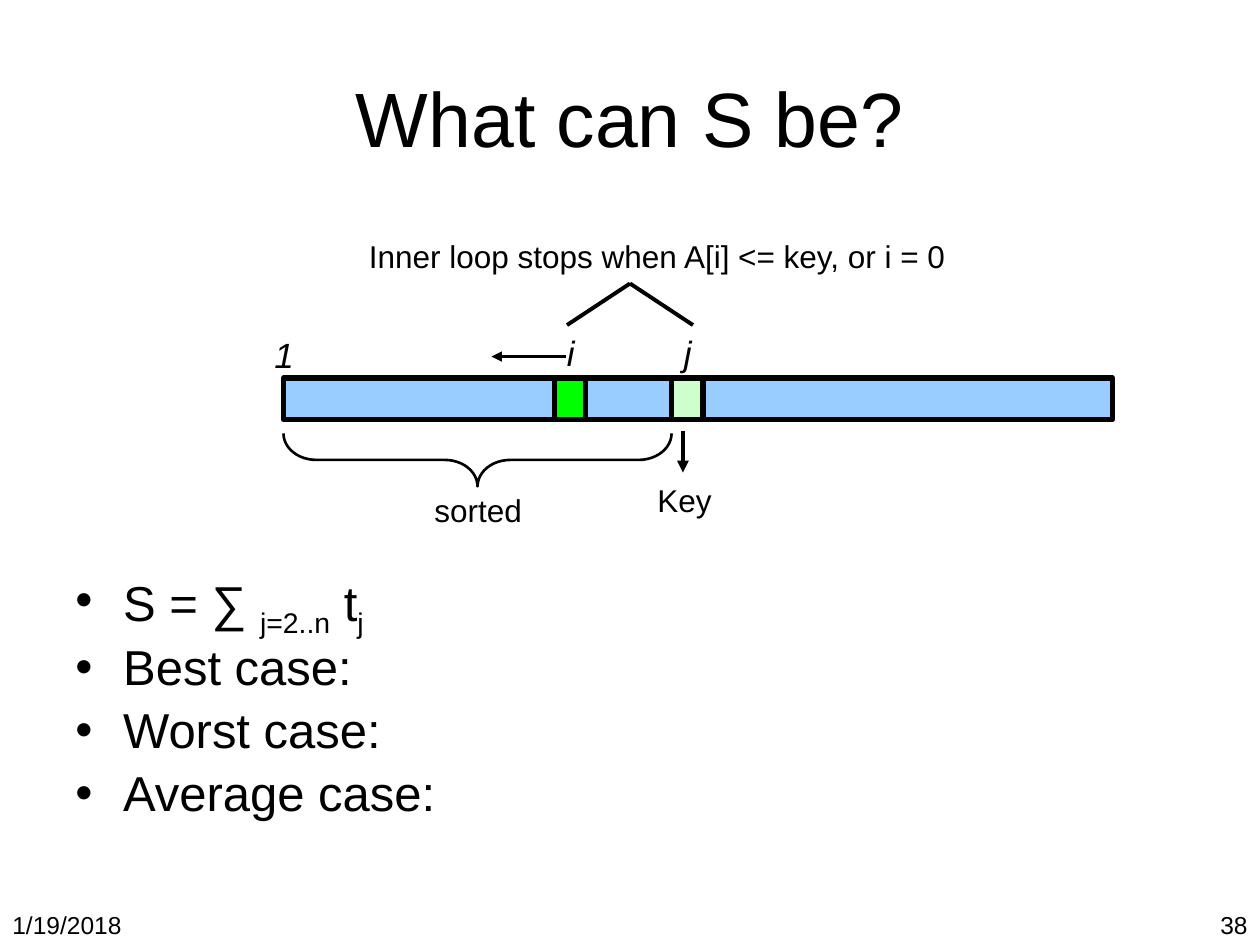
from lxml.etree import SubElement
from pptx import Presentation
from pptx.dml.color import RGBColor
from pptx.enum.shapes import MSO_CONNECTOR, MSO_SHAPE
from pptx.enum.text import MSO_ANCHOR, PP_ALIGN
from pptx.oxml.ns import qn
from pptx.util import Inches, Pt

BLACK = RGBColor(0x00, 0x00, 0x00)
BLUE = RGBColor(0x99, 0xCC, 0xFF)
PALE_GREEN = RGBColor(0xCC, 0xFF, 0xCC)
GREEN = RGBColor(0x00, 0xFF, 0x00)
FONT = "Arial"
ARRAY_TOP, ARRAY_HEIGHT = 3, 0.33

prs = Presentation()
prs.slide_width, prs.slide_height = Inches(10), Inches(7.5)
slide = prs.slides.add_slide(prs.slide_layouts[5])
shapes = slide.shapes


def add_run(paragraph, text, size, italic=False):
    run = paragraph.add_run()
    run.text = text
    run.font.name = FONT
    run.font.size = Pt(size)
    run.font.italic = italic
    run.font.color.rgb = BLACK
    return run


title = shapes.title
title.left, title.top = Inches(0.5), Inches(0.3)
title.width, title.height = Inches(9), Inches(1.25)
title.text_frame.vertical_anchor = MSO_ANCHOR.MIDDLE
heading = title.text_frame.paragraphs[0]
heading.alignment = PP_ALIGN.CENTER
add_run(heading, "What can S be?", 44)

# Cases to analyse; the second item of each pair is the baseline shift
cases = [
    [("S = ∑ ", 0), ("j=2..n", -25), (" t", 0), ("j", -25)],
    [("Best case:", 0)],
    [("Worst case:", 0)],
    [("Average case:", 0)],
]
body = shapes.add_textbox(Inches(0.5), Inches(4.5), Inches(9), Inches(2.2)).text_frame
body.word_wrap = True
for number, parts in enumerate(cases):
    case = body.add_paragraph() if number else body.paragraphs[0]
    case.line_spacing = 0.9
    case.space_before = Pt(5.6)
    properties = case._p.get_or_add_pPr()
    properties.set("marL", str(Inches(0.38)))
    properties.set("indent", str(-Inches(0.38)))
    SubElement(properties, qn("a:buFont"), typeface=FONT)
    SubElement(properties, qn("a:buChar"), char="•")
    for text, baseline in parts:
        run = add_run(case, text, 28)
        if baseline:
            run.font._element.set("baseline", str(baseline * 1000))

# Array with the cells i and j
for left, width, color in [(2.25, 6.58, BLUE), (5.33, 0.25, PALE_GREEN), (4.4, 0.25, GREEN)]:
    cell = shapes.add_shape(MSO_SHAPE.RECTANGLE, Inches(left), Inches(ARRAY_TOP),
                            Inches(width), Inches(ARRAY_HEIGHT))
    cell.shadow.inherit = False
    cell.fill.solid()
    cell.fill.fore_color.rgb = color
    cell.line.color.rgb = BLACK
    cell.line.width = Pt(3)

brace = shapes.add_shape(MSO_SHAPE.LEFT_BRACE, Inches(3.58), Inches(2.11),
                         Inches(0.42), Inches(3.08))
brace.rotation = 270
brace.adjustments[0] = 0.62
brace.adjustments[1] = 0.5
brace.shadow.inherit = False
brace.fill.background()
brace.line.color.rgb = BLACK
brace.line.width = Pt(1.5)

# Text, left, top, width, height, size, italic, wrap, alignment
LEFT, RIGHT = PP_ALIGN.LEFT, PP_ALIGN.RIGHT
labels = [
    ("1/19/2018", 0, 7.17, 2.33, 0.33, 14, False, True, LEFT),
    ("38", 7.67, 7.17, 2.33, 0.33, 14, False, True, RIGHT),
    ("1", 2.08, 2.6, 0.36, 0.43, 20, True, False, LEFT),
    ("i", 4.4, 2.58, 0.26, 0.43, 20, True, False, LEFT),
    ("j", 5.33, 2.58, 0.26, 0.43, 20, True, False, LEFT),
    ("sorted", 3.35, 3.85, 0.9, 0.4, 18, False, False, LEFT),
    ("Key", 5.12, 3.77, 0.63, 0.4, 18, False, False, LEFT),
    ("Inner loop stops when A[i] <= key, or i = 0", 2.83, 1.83, 4.92, 0.4, 18, False, True, LEFT),
]
for text, left, top, width, height, size, italic, wrap, alignment in labels:
    frame = shapes.add_textbox(Inches(left), Inches(top), Inches(width), Inches(height)).text_frame
    frame.word_wrap = wrap
    frame.paragraphs[0].alignment = alignment
    add_run(frame.paragraphs[0], text, size, italic)

# Start, end, line width, arrowhead
pointers = [
    ((4.49, 2.83), (3.9, 2.83), 1.5, True),
    ((4.5, 2.58), (5, 2.25), 2.25, False),
    ((5.5, 2.58), (5, 2.25), 2.25, False),
    ((5.42, 3.42), (5.42, 3.75), 2.25, True),
]
for start, end, width, has_arrow in pointers:
    pointer = shapes.add_connector(MSO_CONNECTOR.STRAIGHT,
                                   *(Inches(value) for value in start + end))
    pointer.line.color.rgb = BLACK
    pointer.line.width = Pt(width)
    if has_arrow:
        SubElement(pointer.line._get_or_add_ln(), qn("a:tailEnd"), type="triangle")
    SubElement(pointer._element.spPr, qn("a:effectLst"))

prs.save("out.pptx")
